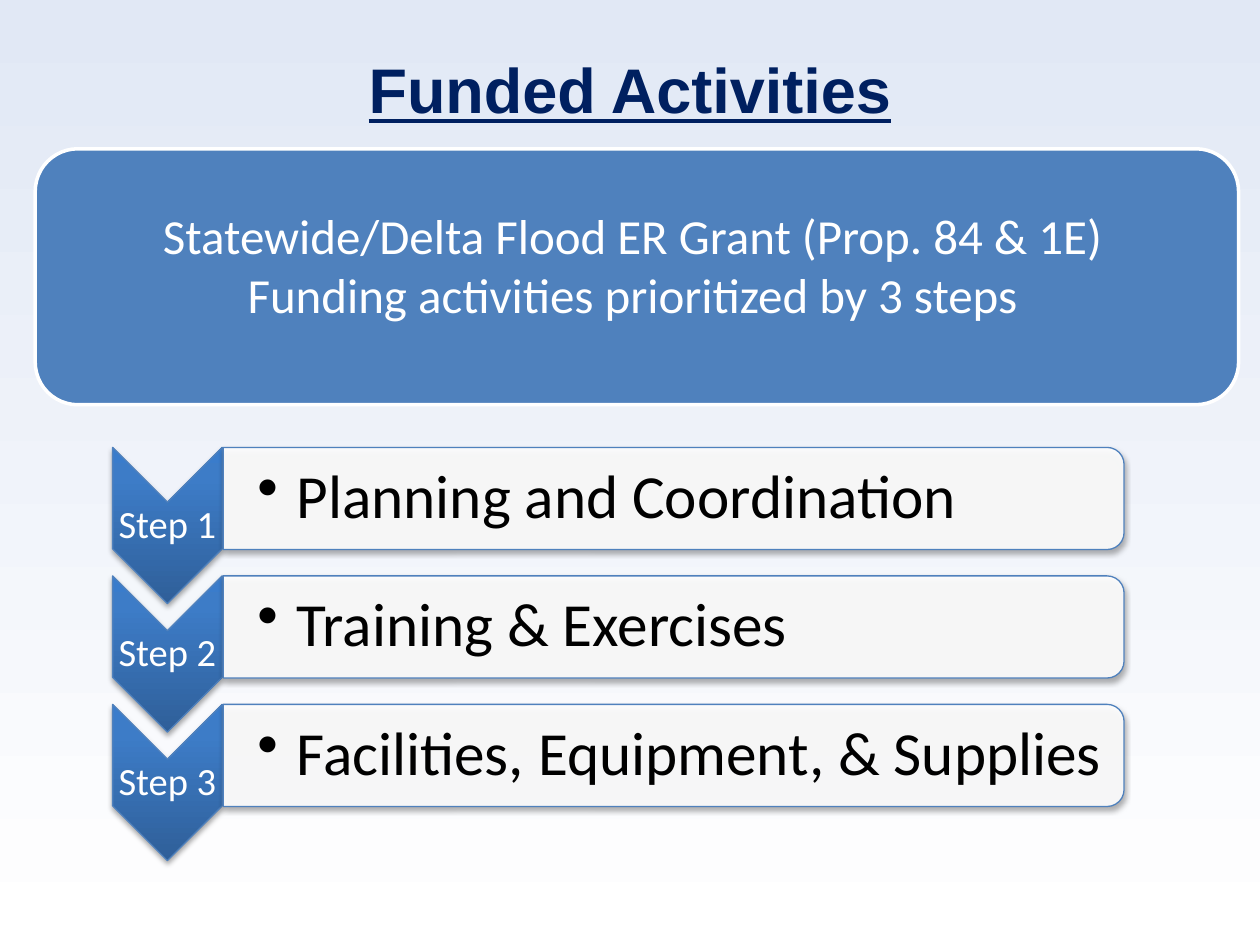
import pptx
import pptx.dml.color
import pptx.enum.shapes
import pptx.enum.text
import pptx.oxml
import pptx.oxml.ns
import pptx.util
from lxml import etree

Cm = pptx.util.Cm
Pt = pptx.util.Pt
qn = pptx.oxml.ns.qn
Shape = pptx.enum.shapes.MSO_SHAPE
Align = pptx.enum.text.PP_ALIGN
Anchor = pptx.enum.text.MSO_ANCHOR

BLUE = "4F81BD"
WHITE = "FFFFFF"
STEPS = ["Planning and Coordination", "Training & Exercises", "Facilities, Equipment, & Supplies"]
FIRST_TOP = 9.02
STEP_PITCH = 2.59


def color(value):
    return pptx.dml.color.RGBColor.from_string(value)


def paint_gradient(owner, fill, stops, angle):
    fill.gradient()
    fill.gradient_angle = angle
    gradient = next(owner.element.iter(qn("a:gradFill")))
    gradient.set("rotWithShape", "0")
    stop_list = gradient.find(qn("a:gsLst"))
    for stop in list(stop_list):
        stop_list.remove(stop)
    for percent, value in stops:
        stop = etree.SubElement(stop_list, qn("a:gs"), pos=str(percent * 1000))
        etree.SubElement(stop, qn("a:srgbClr"), val=value)


def add_shadow(shape):
    effects = shape.element.spPr.find(qn("a:effectLst"))
    shadow = etree.SubElement(effects, qn("a:outerShdw"), blurRad="40000", dist="23000",
                              dir="5400000", rotWithShape="0")
    tint = etree.SubElement(shadow, qn("a:srgbClr"), val="000000")
    etree.SubElement(tint, qn("a:alpha"), val="35000")


def add_box(page, kind, left, top, width, height, line, weight):
    shape = page.shapes.add_shape(kind, Cm(left), Cm(top), Cm(width), Cm(height))
    shape.shadow.inherit = False
    shape.line.color.rgb = color(line)
    shape.line.width = Pt(weight)
    return shape


def add_turned_box(page, kind, left, top, width, height):
    offset = (width - height) / 2
    shape = add_box(page, kind, left + offset, top - offset, height, width, BLUE, 0.75)
    shape.rotation = 90
    add_shadow(shape)
    return shape


def format_text(frame, size, value, font="Calibri", align=Align.CENTER):
    frame.word_wrap = True
    frame.vertical_anchor = Anchor.MIDDLE
    for para in frame.paragraphs:
        para.alignment = align
        for span in para.runs:
            span.font.name = font
            span.font.size = Pt(size)
            span.font.color.rgb = color(value)


def add_text(page, text, left, top, width, height, size, value, inset, align=Align.CENTER):
    box = page.shapes.add_textbox(Cm(left), Cm(top), Cm(width), Cm(height))
    frame = box.text_frame
    frame.text = text
    frame.margin_left = frame.margin_right = Cm(inset)
    frame.margin_top = frame.margin_bottom = Cm(inset)
    format_text(frame, size, value, align=align)
    return frame


def add_bullet(para, indent):
    properties = para._p.get_or_add_pPr()
    properties.set("marL", str(Cm(indent)))
    properties.set("indent", str(-Cm(indent)))
    etree.SubElement(properties, qn("a:buChar"), char="•")


def add_title(page, text):
    title = page.shapes.title
    title.left, title.top = Cm(1.27), Cm(0.2)
    title.width, title.height = Cm(22.86), Cm(3.18)
    title.text_frame.text = text
    format_text(title.text_frame, 36, "002060", "Arial")
    font = title.text_frame.paragraphs[0].runs[0].font
    font.bold = True
    font.underline = True


def add_step(page, number, text):
    top = FIRST_TOP + (number - 1) * STEP_PITCH
    chevron = add_turned_box(page, Shape.CHEVRON, 2.27, top, 2.21, 3.15)
    paint_gradient(chevron, chevron.fill, [(0, "2F5F99"), (80, "3D7CC7"), (100, "3A7CCB")], 90)
    label = add_text(page, f"Step {number}", 2.27, top + 1.11, 2.21, 0.94, 22, WHITE, 0.05)
    label.paragraphs[0].line_spacing = 0.9

    bar = add_turned_box(page, Shape.ROUND_2_SAME_RECTANGLE, 4.5, top, 18.16, 2.06)
    bar.fill.solid()
    bar.fill.fore_color.rgb = color(WHITE)
    tint = next(bar.element.spPr.iter(qn("a:srgbClr")))
    etree.SubElement(tint, qn("a:alpha"), val="90000")
    item = add_text(page, text, 4.5, top + 0.1, 18.06, 1.85, 35, "000000", 0.05, Align.LEFT)
    item.margin_left = Cm(0.69)
    item.paragraphs[0].line_spacing = 0.9
    add_bullet(item.paragraphs[0], 0.79)


def add_banner(page, text):
    banner = add_box(page, Shape.ROUNDED_RECTANGLE, 0.71, 3, 24.26, 5.16, WHITE, 2)
    banner.fill.solid()
    banner.fill.fore_color.rgb = color(BLUE)
    add_text(page, text, 0.38, 3, 24.74, 4.65, 28, WHITE, 0.38)


def main():
    deck = pptx.Presentation()
    deck.slide_width, deck.slide_height = Cm(25.4), Cm(19.05)
    page = deck.slides.add_slide(deck.slide_layouts[5])
    paint_gradient(page, page.background.fill, [(0, "E1E8F5"), (100, WHITE)], 270)
    add_title(page, "Funded Activities")
    for number, text in enumerate(STEPS, 1):
        add_step(page, number, text)
    add_banner(page, "Statewide/Delta Flood ER Grant (Prop. 84 & 1E)\n"
                     "Funding activities prioritized by 3 steps")
    deck.save("out.pptx")


if __name__ == "__main__":
    main()
